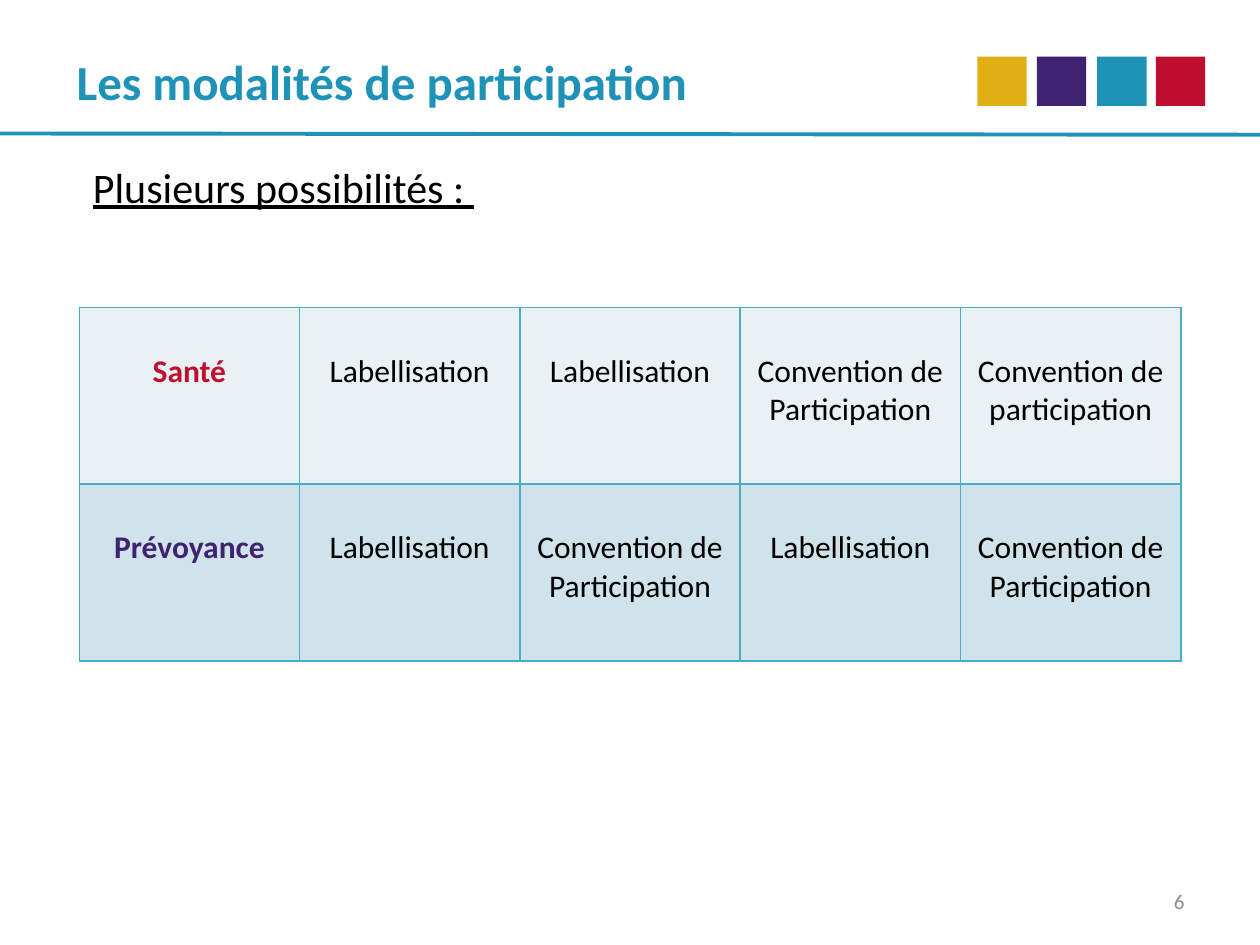
from lxml import etree
from pptx import Presentation
from pptx.dml.color import RGBColor
from pptx.enum.shapes import MSO_CONNECTOR, MSO_SHAPE
from pptx.enum.text import MSO_ANCHOR, PP_ALIGN
from pptx.oxml import parse_xml
from pptx.oxml.ns import nsdecls, qn
from pptx.util import Pt

LEFT, CENTER, RIGHT = PP_ALIGN.LEFT, PP_ALIGN.CENTER, PP_ALIGN.RIGHT
TOP, MIDDLE = MSO_ANCHOR.TOP, MSO_ANCHOR.MIDDLE
RECT, STRAIGHT = MSO_SHAPE.RECTANGLE, MSO_CONNECTOR.STRAIGHT

GOLD = RGBColor(0xE1, 0xAE, 0x13)
PURPLE = RGBColor(0x3F, 0x22, 0x70)
BLUE = RGBColor(0x1F, 0x92, 0xB7)
RED = RGBColor(0xBE, 0x0F, 0x2E)
GREY = RGBColor(0x8C, 0x8C, 0x8C)
BLACK = RGBColor(0, 0, 0)
PALE = RGBColor(0xE9, 0xF1, 0xF5)
SOFT = RGBColor(0xD0, 0xE3, 0xEA)
BORDER = RGBColor(0x4B, 0xAC, 0xC6)
FONT = "Calibri"

# Content
TITLE = "Les modalités de participation"
LEAD = "Plusieurs possibilités : "
NUMBER = "6"
LABEL, DEAL = "Labellisation", "Convention de Participation"
ROWS = [  # head, head colour, fill, options
    ("Santé", RED, PALE,
     [LABEL, LABEL, DEAL, "Convention de participation"]),
    ("Prévoyance", PURPLE, SOFT, [LABEL, DEAL, LABEL, DEAL]),
]
SQUARES = [(558.5, GOLD), (592.5, PURPLE), (627, BLUE), (660.5, RED)]

# Layout, in points
WIDE, HIGH = 720, 540
SIDE, SQUARE_TOP = 28.2, 32.3
GRID_X, GRID_Y = 45.3, 175.6
COL, ROW = 125.9, 101
CELL_TOP = 25.6


def style(para, size, color, align=LEFT, bold=False, under=False):
    para.alignment = align
    for run in para.runs:
        font = run.font
        font.name, font.size, font.bold = FONT, Pt(size), bold
        font.underline = under
        font.color.rgb = color


def add_text(slide, text, box, anchor, *look, **more):
    frame = slide.shapes.add_textbox(*map(Pt, box)).text_frame
    frame.word_wrap = True
    frame.vertical_anchor = anchor
    frame.text = text
    style(frame.paragraphs[0], *look, **more)


def add_edges(cell):
    props = cell._tc.get_or_add_tcPr()
    for spot, tag in enumerate(("lnL", "lnR", "lnT", "lnB")):
        edge = parse_xml(
            f'<a:{tag} {nsdecls("a")} w="{Pt(1)}"><a:solidFill>'
            f'<a:srgbClr val="{BORDER}"/></a:solidFill></a:{tag}>')
        props.insert(spot, edge)


def fill_cell(cell, text, color, fill, bold):
    cell.text = text
    cell.margin_top = Pt(CELL_TOP)
    cell.fill.solid()
    cell.fill.fore_color.rgb = fill
    style(cell.text_frame.paragraphs[0], 18, color, CENTER, bold)
    add_edges(cell)


def main():
    deck = Presentation()
    deck.slide_width, deck.slide_height = Pt(WIDE), Pt(HIGH)
    slide = deck.slides.add_slide(deck.slide_layouts[6])
    shapes = slide.shapes

    # Header rule
    rule = shapes.add_connector(STRAIGHT, 0, Pt(76.3), Pt(WIDE), Pt(77))
    rule.line.color.rgb = BLUE
    rule.line.width = Pt(2.25)
    etree.SubElement(rule._element.spPr, qn("a:effectLst"))

    # Colour squares
    group = shapes.add_group_shape()
    for left, color in SQUARES:
        square = group.shapes.add_shape(
            RECT, Pt(left), Pt(SQUARE_TOP), Pt(SIDE), Pt(SIDE))
        square.shadow.inherit = False
        square.fill.solid()
        square.fill.fore_color.rgb = color
        square.line.fill.background()

    # Text
    add_text(slide, NUMBER, (516, 500.5, 168, 28.8), MIDDLE, 12, GREY, RIGHT)
    add_text(slide, TITLE, (36.7, 16.5, 648, 60), MIDDLE, 28, BLUE, bold=True)
    add_text(slide, LEAD, (46, 88.6, 635, 124), TOP, 24, BLACK, under=True)

    # Table of options
    count = 1 + len(ROWS[0][3])
    table = shapes.add_table(
        len(ROWS), count, Pt(GRID_X), Pt(GRID_Y),
        Pt(COL * count), Pt(ROW * len(ROWS))).table
    table.first_row = table.horz_banding = False
    for col in table.columns:
        col.width = Pt(COL)
    for r, (head, color, fill, options) in enumerate(ROWS):
        table.rows[r].height = Pt(ROW)
        fill_cell(table.cell(r, 0), head, color, fill, True)
        for c, text in enumerate(options, 1):
            fill_cell(table.cell(r, c), text, BLACK, fill, False)

    deck.save("out.pptx")


if __name__ == "__main__":
    main()
